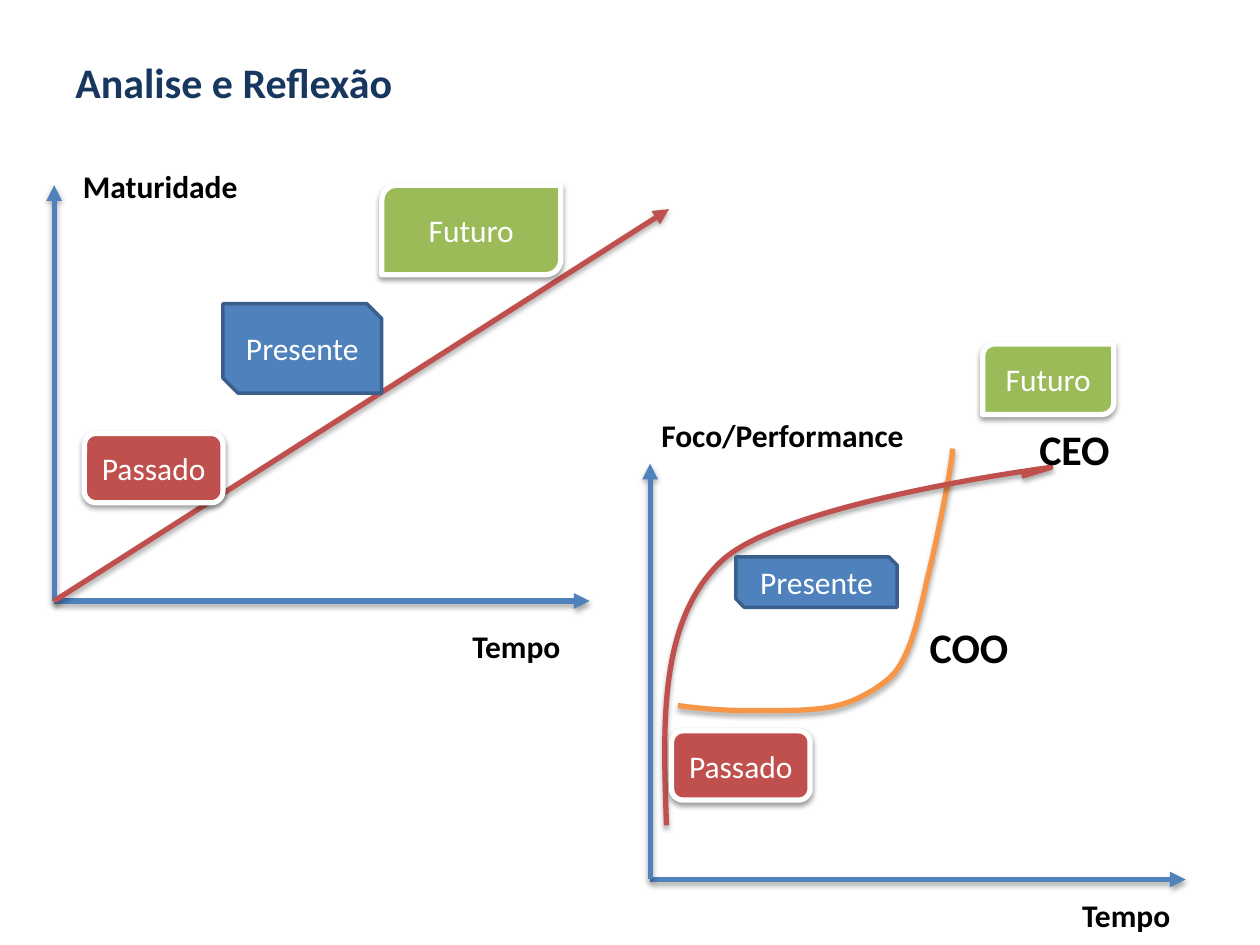
from dataclasses import dataclass

from lxml.etree import SubElement
from pptx import Presentation
from pptx.dml.color import RGBColor
from pptx.enum.shapes import MSO_CONNECTOR as LINK, MSO_SHAPE as PRESET
from pptx.enum.text import MSO_ANCHOR as ANCHOR, PP_ALIGN as ALIGN
from pptx.oxml.ns import qn
from pptx.util import Inches, Pt


@dataclass(frozen=True)
class Theme:
    font: str = "Calibri"
    title: str = "17375E"
    ink: str = "000000"
    white: str = "FFFFFF"
    blue: str = "4F81BD"
    blue_edge: str = "3A5F8C"
    red: str = "C0504D"
    green: str = "9BBB59"
    orange: str = "F79646"
    large: int = 24
    normal: int = 18
    stroke: int = 3
    thin: int = 2


THEME = Theme()

# Stage name: preset, fill, edge, edge width, shadow opacity in percent
STAGES = {
    "Passado": (PRESET.ROUNDED_RECTANGLE, THEME.red, THEME.white, THEME.stroke, 38),
    "Presente": (PRESET.SNIP_2_DIAG_RECTANGLE, THEME.blue, THEME.blue_edge, THEME.thin, 0),
    "Futuro": (PRESET.ROUND_2_DIAG_RECTANGLE, THEME.green, THEME.white, THEME.stroke, 38),
}


def color(code):
    return RGBColor.from_string(code)


def outline(shape, code, width=THEME.stroke):
    shape.line.color.rgb = color(code)
    shape.line.width = Pt(width)


def cast_shadow(shape, opacity=35):
    """Drop a soft shadow straight down; zero opacity means none."""
    effects = SubElement(shape._element.spPr, qn("a:effectLst"))
    if opacity:
        shadow = SubElement(effects, qn("a:outerShdw"), blurRad=str(Pt(3.1)),
                            dist=str(Pt(1.8)), dir="5400000", rotWithShape="0")
        black = SubElement(shadow, qn("a:srgbClr"), val=THEME.ink)
        SubElement(black, qn("a:alpha"), val=str(opacity * 1000))


def write(frame, text, code, size, bold=False, align=ALIGN.LEFT):
    paragraph = frame.paragraphs[0]
    paragraph.alignment = align
    run = paragraph.add_run()
    run.text = text
    for name, value in {"name": THEME.font, "size": Pt(size), "bold": bold}.items():
        setattr(run.font, name, value)
    run.font.color.rgb = color(code)


def add_label(slide, text, box, code=THEME.ink, size=THEME.normal, anchor=ANCHOR.TOP):
    frame = slide.shapes.add_textbox(*map(Inches, box)).text_frame
    for name, value in {"word_wrap": True, "vertical_anchor": anchor}.items():
        setattr(frame, name, value)
    write(frame, text, code, size, bold=True)


def add_stage(slide, name, box):
    preset, fill, edge, width, opacity = STAGES[name]
    stage = slide.shapes.add_shape(preset, *map(Inches, box))
    stage.fill.solid()
    stage.fill.fore_color.rgb = color(fill)
    outline(stage, edge, width)
    cast_shadow(stage, opacity)
    stage.text_frame.vertical_anchor = ANCHOR.MIDDLE
    write(stage.text_frame, name, THEME.white, THEME.normal, align=ALIGN.CENTER)


def add_arrow(slide, start, end, code):
    arrow = slide.shapes.add_connector(LINK.STRAIGHT, *map(Inches, (*start, *end)))
    outline(arrow, code)
    SubElement(arrow._element.spPr.find(qn("a:ln")), qn("a:tailEnd"), type="triangle")
    cast_shadow(arrow)


def add_axes(slide, x, y, width=4.25, height=3.3):
    for end in ((x + width, y), (x, y - height)):
        add_arrow(slide, (x, y), end, THEME.blue)


def add_curve(slide, points, code):
    """Draw cubic curves through groups of three points; leftovers stay straight."""
    # The builder rounds to whole units, so it is given lengths in EMU
    start_point, *others = [(Inches(x), Inches(y)) for x, y in points]
    builder = slide.shapes.build_freeform(*start_point)
    builder.add_line_segments(others, close=False)
    curve = builder.convert_to_shape()
    segments = list(curve._element.iter(qn("a:lnTo")))
    for first in range(0, len(segments) - 2, 3):
        group = segments[first:first + 3]
        bezier = group[0].getparent().makeelement(qn("a:cubicBezTo"))
        group[0].addprevious(bezier)
        for segment in group:
            bezier.append(segment[0])
            segment.getparent().remove(segment)
    curve.fill.background()
    outline(curve, code)
    cast_shadow(curve)


def add_maturity_chart(slide):
    origin = (0.43, 4.77)
    add_axes(slide, *origin)
    add_arrow(slide, origin, (5.31, 1.66), THEME.red)
    for name, box in (("Passado", (0.67, 3.44, 1.1, 0.55)),
                      ("Presente", (1.77, 2.41, 1.26, 0.71)),
                      ("Futuro", (3.03, 1.47, 1.42, 0.71))):
        add_stage(slide, name, box)
    add_label(slide, "Maturidade", (0.56, 1.28, 1.5, 0.4))
    add_label(slide, "Tempo", (3.65, 4.93, 1.5, 0.4))


def add_performance_chart(slide):
    add_axes(slide, 5.16, 6.98)
    # COO curve, then CEO curve with its short barb
    add_curve(slide, [(5.38, 5.6), (5.68, 5.64), (5.84, 5.64), (6.04, 5.64),
                      (6.25, 5.64), (6.45, 5.64), (6.6, 5.61),
                      (6.75, 5.58), (6.84, 5.53), (6.94, 5.47),
                      (7.04, 5.4), (7.11, 5.36), (7.18, 5.21),
                      (7.25, 5.07), (7.3, 4.87), (7.36, 4.59),
                      (7.43, 4.32), (7.56, 3.68), (7.56, 3.56)], THEME.orange)
    add_curve(slide, [(5.29, 6.55), (5.26, 5.73), (5.23, 4.92), (5.73, 4.45),
                      (6.24, 3.98), (8.34, 3.71), (8.34, 3.71),
                      (8.11, 3.78)], THEME.red)
    add_label(slide, "Tempo", (8.49, 7.06, 1.5, 0.4))
    add_label(slide, "Foco/Performance", (5.15, 3.25, 2.14, 0.4))
    add_label(slide, "CEO", (8.15, 3.31, 0.8, 0.5), size=THEME.large)
    add_label(slide, "COO", (7.28, 4.88, 0.85, 0.5), size=THEME.large)
    for name, box in (("Passado", (5.33, 5.8, 1.1, 0.55)),
                      ("Presente", (5.84, 4.42, 1.28, 0.4)),
                      ("Futuro", (7.8, 2.73, 1.04, 0.56))):
        add_stage(slide, name, box)


def main():
    deck = Presentation()
    deck.slide_width, deck.slide_height = Inches(10), Inches(7.5)
    slide = deck.slides.add_slide(deck.slide_layouts[6])
    add_label(slide, "Analise e Reflexão", (0.5, 0.3, 9, 0.69),
              THEME.title, THEME.large, ANCHOR.MIDDLE)
    add_maturity_chart(slide)
    add_performance_chart(slide)
    deck.save("out.pptx")


if __name__ == "__main__":
    main()
